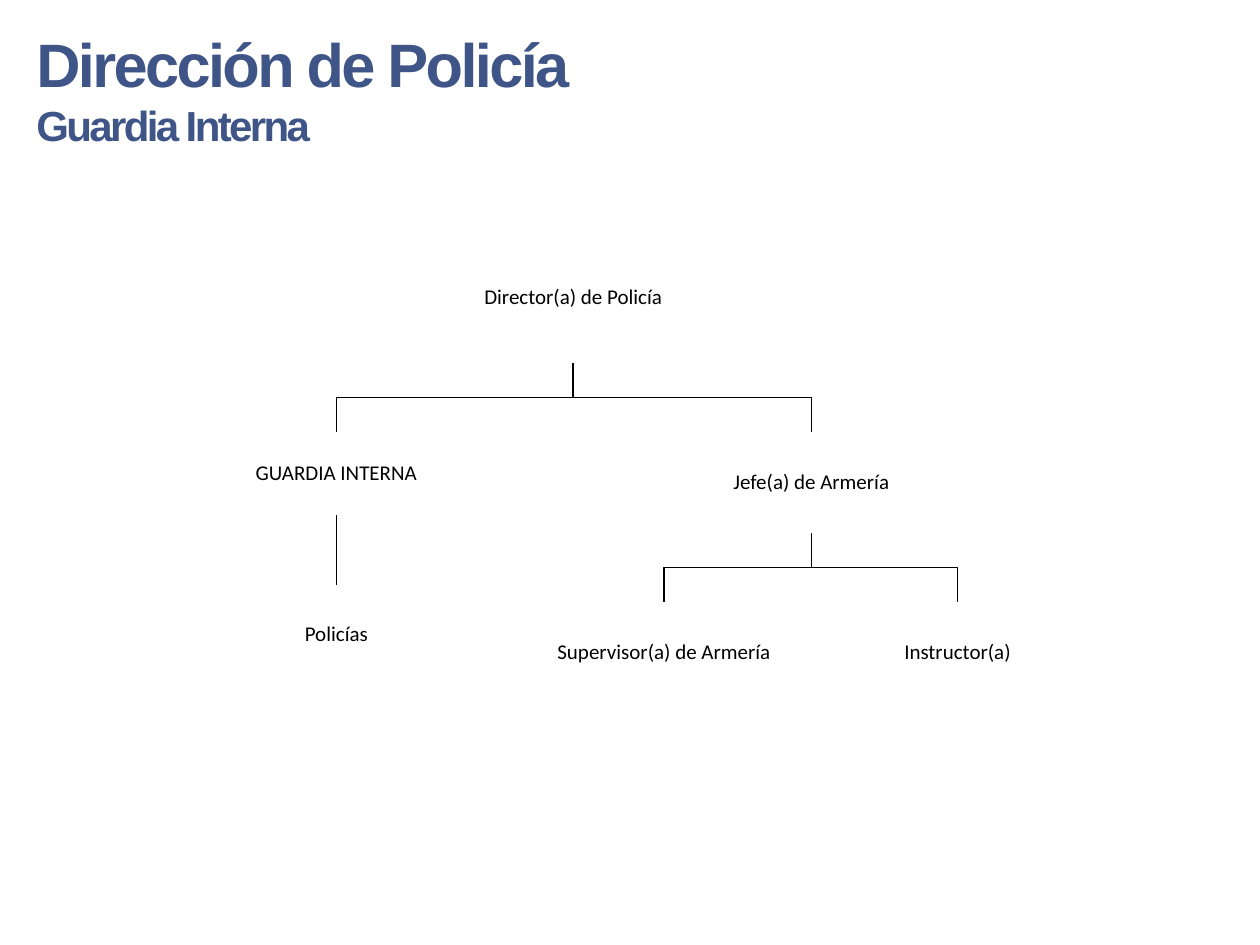
from lxml.etree import SubElement
from pptx import Presentation
from pptx.dml.color import RGBColor
from pptx.enum.shapes import MSO_CONNECTOR, MSO_SHAPE
from pptx.enum.text import MSO_ANCHOR, MSO_AUTO_SIZE, PP_ALIGN
from pptx.oxml.ns import qn
from pptx.util import Inches, Pt

COLORS = {"heading": "3F5588", "ink": "000000", "box": "FFFFFF"}

HEADING_FONT = {"name": "Arial", "bold": True}
POST_FONT = {"name": "Calibri", "size": Pt(12)}
POST_FRAME = {
    "word_wrap": True,
    "vertical_anchor": MSO_ANCHOR.MIDDLE,
    **{f"margin_{side}": Inches(0.01) for side in ("left", "top", "right", "bottom")},
}
POST_PARAGRAPH = {"alignment": PP_ALIGN.CENTER, "line_spacing": 0.9}

# Post: centre x, top, width, height
POSTS = {
    "Director(a) de Policía": (4.55, 1.85, 2.61, 1.03),
    "GUARDIA INTERNA": (2.67, 3.43, 2.33, 0.66),
    "Policías": (2.67, 4.64, 2.33, 0.8),
    "Jefe(a) de Armería": (6.44, 3.43, 2.33, 0.8),
    "Supervisor(a) de Armería": (5.27, 4.78, 1.78, 0.8),
    "Instructor(a)": (7.6, 4.78, 1.78, 0.8),
}

# Superior and the posts that report to it
REPORTS = {
    "Jefe(a) de Armería": ["Instructor(a)", "Supervisor(a) de Armería"],
    "Director(a) de Policía": ["Jefe(a) de Armería", "GUARDIA INTERNA"],
    "GUARDIA INTERNA": ["Policías"],
}


def color(key):
    return RGBColor.from_string(COLORS[key])


def apply(target, values):
    for attribute, value in values.items():
        setattr(target, attribute, value)


def add_heading(slide, lines):
    heading = slide.shapes.add_textbox(
        Inches(0.19), Inches(0.16), Inches(7.46), Inches(1.09))
    frame = heading.text_frame
    apply(frame, {"word_wrap": True, "auto_size": MSO_AUTO_SIZE.SHAPE_TO_FIT_TEXT})
    for index, (wording, size) in enumerate(lines):
        paragraph = frame.add_paragraph() if index else frame.paragraphs[0]
        run = paragraph.add_run()
        run.text = wording
        apply(run.font, {**HEADING_FONT, "size": Pt(size)})
        run.font.color.rgb = color("heading")
        # Tight letter spacing, in hundredths of a point
        run.font._element.set("spc", "-150")


def add_branch(slide, superior, report):
    start_x, top, _, height = POSTS[superior]
    end_x, end_y = POSTS[report][:2]
    start_y = top + height
    if start_x == end_x:
        branch = slide.shapes.add_connector(
            MSO_CONNECTOR.STRAIGHT,
            *map(Inches, (start_x, start_y, end_x, end_y)))
        SubElement(branch._element.spPr, qn("a:effectLst"))
    else:
        middle = (start_y + end_y) / 2
        builder = slide.shapes.build_freeform(Inches(start_x), Inches(start_y))
        corners = [(start_x, middle), (end_x, middle), (end_x, end_y)]
        builder.add_line_segments(
            [(Inches(x), Inches(y)) for x, y in corners], close=False)
        branch = builder.convert_to_shape()
        branch.fill.background()
        branch.shadow.inherit = False
    branch.line.color.rgb = color("ink")
    branch.line.width = Pt(1)


def add_post(slide, title, center, top, width, height):
    post = slide.shapes.add_shape(
        MSO_SHAPE.RECTANGLE,
        *map(Inches, (center - width / 2, top, width, height)))
    post.shadow.inherit = False
    post.fill.solid()
    post.fill.fore_color.rgb = color("box")
    post.line.fill.background()
    apply(post.text_frame, POST_FRAME)
    paragraph = post.text_frame.paragraphs[0]
    apply(paragraph, POST_PARAGRAPH)
    run = paragraph.add_run()
    run.text = title
    apply(run.font, POST_FONT)
    run.font.color.rgb = color("ink")


def main():
    presentation = Presentation()
    apply(presentation, {"slide_width": Inches(10), "slide_height": Inches(7.5)})
    slide = presentation.slides.add_slide(presentation.slide_layouts[6])

    # Heading
    add_heading(slide, [("Dirección de Policía", 35), ("Guardia Interna", 24)])

    # Posts
    for title, place in POSTS.items():
        add_post(slide, title, *place)

    # Reporting lines
    for superior, reports in REPORTS.items():
        for report in reports:
            add_branch(slide, superior, report)

    presentation.save("out.pptx")


if __name__ == "__main__":
    main()
